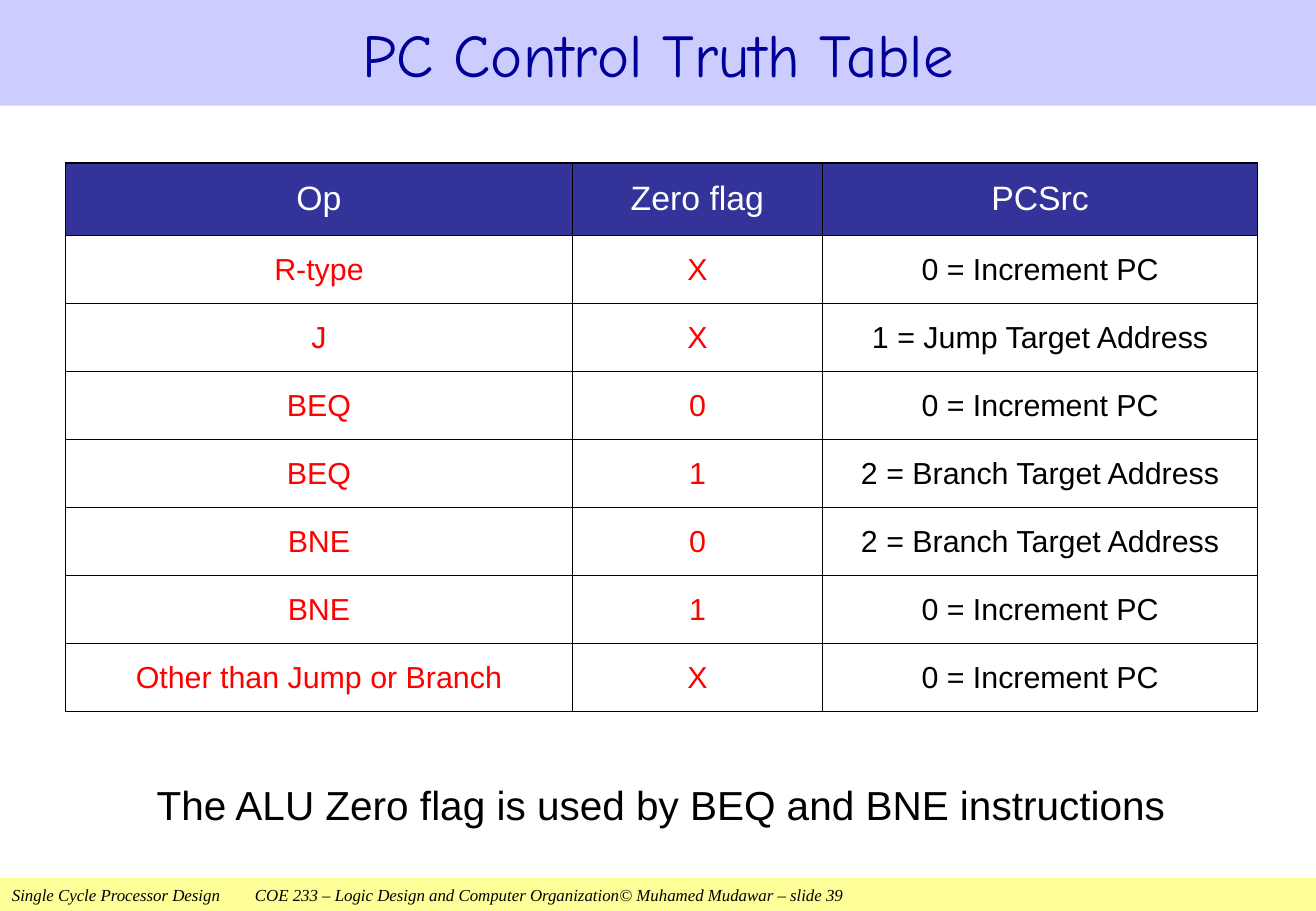
from dataclasses import dataclass

from pptx import Presentation
from pptx import util as u
from pptx.dml import color
from pptx.enum import shapes, text
from pptx.oxml import ns, xmlchemy

WIDTH, HEIGHT = 10.83, 7.5
MARGIN, CONTENT_WIDTH = 0.54, 9.8
COLUMN_WIDTHS = (4.17, 2.06, 3.58)
HEADER_HEIGHT, ROW_HEIGHT = 0.6, 0.56
BLACK, WHITE, RED = "000000", "FFFFFF", "FF0000"


@dataclass(frozen=True)
class Style:
    size: float
    color: str
    font: str = "Arial"
    italic: bool = False
    align: text.PP_ALIGN = text.PP_ALIGN.CENTER


@dataclass(frozen=True)
class Box:
    text: str
    top: float
    height: float
    style: Style
    left: float = 0
    width: float = WIDTH
    fill: str | None = None
    line_spacing: float = 1.0


HEADER = Style(20, WHITE)
INPUT = Style(18, RED)
OUTPUT = Style(18, BLACK)

BOXES = (
    Box("Single Cycle Processor Design\tCOE 233 – Logic Design and Computer Organization\t"
        "© Muhamed Mudawar – slide 39", 7.23, 0.27,
        Style(10, BLACK, "Times New Roman", True, text.PP_ALIGN.LEFT), fill="FFFF99"),
    Box("PC Control Truth Table", 0, 0.87, Style(36, "000099", "Comic Neue"), fill="CCCCFF"),
    Box("The ALU Zero flag is used by BEQ and BNE instructions", 6.25, 0.7,
        Style(24, BLACK), MARGIN, CONTENT_WIDTH, line_spacing=1.1),
)

INCREMENT = "0 = Increment PC"
BRANCH = "2 = Branch Target Address"
TRUTH_TABLE = (
    ("Op", "Zero flag", "PCSrc"),
    ("R-type", "X", INCREMENT),
    ("J", "X", "1 = Jump Target Address"),
    ("BEQ", "0", INCREMENT),
    ("BEQ", "1", BRANCH),
    ("BNE", "0", BRANCH),
    ("BNE", "1", INCREMENT),
    ("Other than Jump or Branch", "X", INCREMENT),
)


def rgb(value: str) -> color.RGBColor:
    return color.RGBColor.from_string(value)


def set_text(tf, content: str, style: Style, line_spacing: float = 1.0) -> None:
    p = tf.paragraphs[0]
    p.text = content
    p.alignment = style.align
    p.line_spacing = line_spacing
    for r in p.runs:
        r.font.name = style.font
        r.font.size = u.Pt(style.size)
        r.font.bold = False
        r.font.italic = style.italic
        r.font.color.rgb = rgb(style.color)


def add_box(s, box: Box) -> None:
    frame = [u.Inches(v) for v in (box.left, box.top, box.width, box.height)]
    if box.fill:
        sp = s.shapes.add_shape(shapes.MSO_SHAPE.RECTANGLE, *frame)
        sp.shadow.inherit = False
        sp.fill.solid()
        sp.fill.fore_color.rgb = rgb(box.fill)
        sp.line.fill.background()
    else:
        sp = s.shapes.add_textbox(*frame)
    tf = sp.text_frame
    tf.word_wrap = True
    tf.vertical_anchor = text.MSO_ANCHOR.MIDDLE
    tf.margin_top = tf.margin_bottom = 0
    set_text(tf, box.text, box.style, box.line_spacing)


def add_borders(cell) -> None:
    tc_pr = cell._tc.get_or_add_tcPr()
    for side in ("lnL", "lnR", "lnT", "lnB"):
        ln = xmlchemy.OxmlElement(f"a:{side}")
        ln.set("w", str(u.Pt(1)))
        fill = xmlchemy.OxmlElement("a:solidFill")
        clr = xmlchemy.OxmlElement("a:srgbClr")
        clr.set("val", BLACK)
        fill.append(clr)
        ln.append(fill)
        tc_pr.append(ln)


def add_cell(cell, content: str, style: Style) -> None:
    cell.margin_left = cell.margin_right = u.Inches(0.03)
    cell.margin_top = cell.margin_bottom = u.Inches(0.02)
    cell.vertical_anchor = text.MSO_ANCHOR.MIDDLE
    add_borders(cell)
    if style is HEADER:
        cell.fill.solid()
        cell.fill.fore_color.rgb = rgb("333399")
    else:
        cell.fill.background()
    set_text(cell.text_frame, content, style)


def add_truth_table(s) -> None:
    heights = [HEADER_HEIGHT] + [ROW_HEIGHT] * (len(TRUTH_TABLE) - 1)
    table = s.shapes.add_table(
        len(TRUTH_TABLE), len(COLUMN_WIDTHS), u.Inches(MARGIN), u.Inches(1.34),
        u.Inches(sum(COLUMN_WIDTHS)), u.Inches(sum(heights))).table
    table.horz_banding = False
    for column, width in zip(table.columns, COLUMN_WIDTHS):
        column.width = u.Inches(width)
    for i, (row, height) in enumerate(zip(table.rows, heights)):
        row.height = u.Inches(height)
        styles = (INPUT, INPUT, OUTPUT) if i else (HEADER,) * 3
        for cell, content, style in zip(row.cells, TRUTH_TABLE[i], styles):
            add_cell(cell, content, style)


def main() -> None:
    prs = Presentation()
    prs.slide_width, prs.slide_height = u.Inches(WIDTH), u.Inches(HEIGHT)
    s = prs.slides.add_slide(prs.slide_layouts[6])
    for box in BOXES:
        add_box(s, box)
    add_truth_table(s)
    prs.save("out.pptx")


if __name__ == "__main__":
    main()
